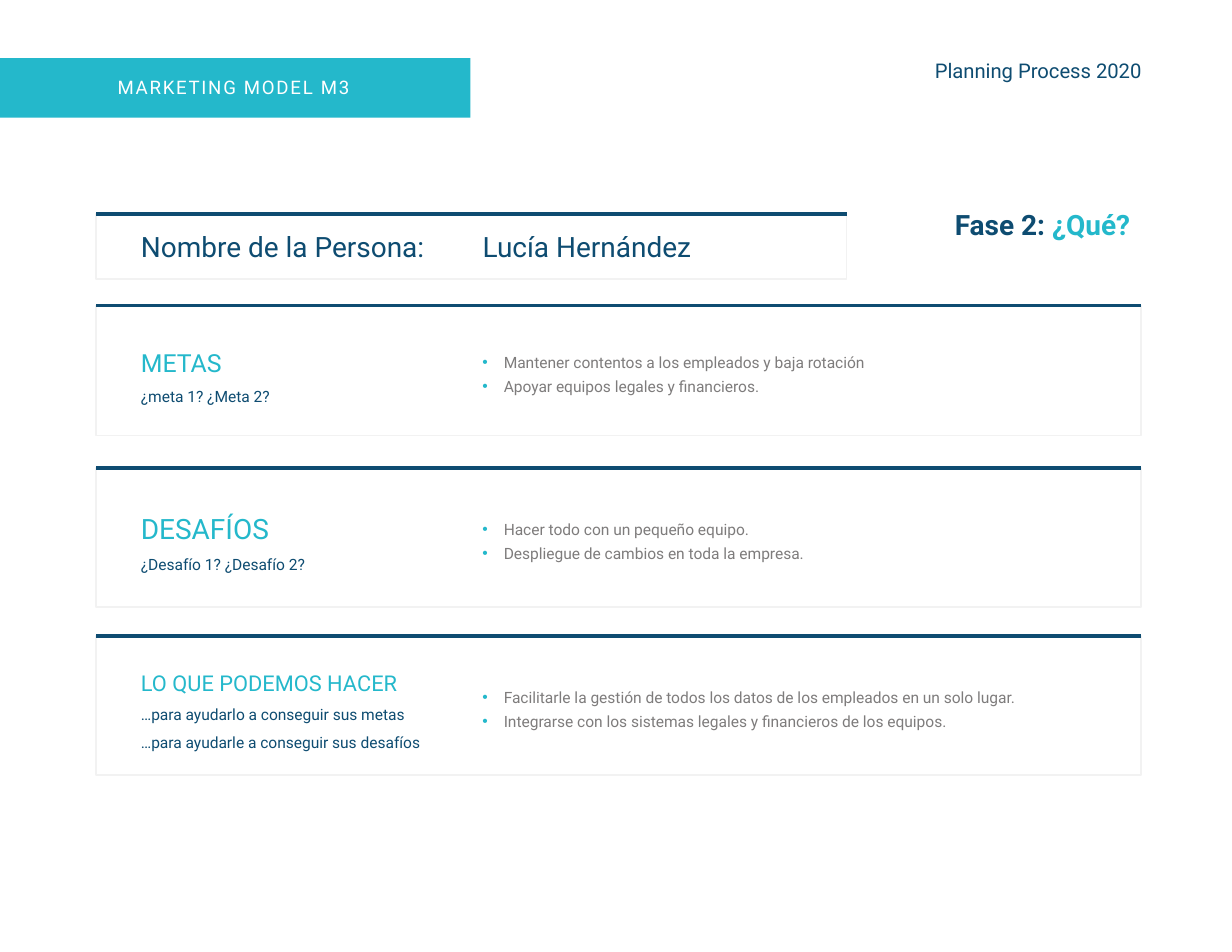
"""Build the persona sheet for phase 2 of the planning process."""
from lxml import etree
from pptx import Presentation
from pptx.dml.color import RGBColor
from pptx.enum.shapes import MSO_CONNECTOR, MSO_SHAPE
from pptx.enum.text import MSO_AUTO_SIZE, PP_ALIGN
from pptx.oxml.ns import qn
from pptx.util import Inches, Pt

RECT, LINE = MSO_SHAPE.RECTANGLE, MSO_CONNECTOR.STRAIGHT
GROW = MSO_AUTO_SIZE.SHAPE_TO_FIT_TEXT
LEFT, RIGHT, JUST = PP_ALIGN.LEFT, PP_ALIGN.RIGHT, PP_ALIGN.JUSTIFY
TEAL = RGBColor(0x24, 0xB8, 0xCB)
NAVY = RGBColor(0x0E, 0x4C, 0x71)
GRAY = RGBColor(0x7E, 0x7C, 0x7C)
PALE = RGBColor(0xF2, 0xF2, 0xF2)
WHITE = RGBColor(0xFF, 0xFF, 0xFF)

deck = Presentation()
deck.slide_width, deck.slide_height = Inches(11), Inches(8.5)
COL, ROW = deck.slide_width / 110, deck.slide_height / 85
slide = deck.slides.add_slide(deck.slide_layouts[6])
shapes = slide.shapes


def place(x, y, w, h):
    return int(x * COL), int(y * ROW), int(w * COL), int(h * ROW)


def write(spot, paras, align=LEFT, gap=None, wrap=True, inset=True, dot=False):
    box = shapes.add_textbox(*place(*spot))
    frame = box.text_frame
    frame.word_wrap, frame.auto_size = wrap, GROW
    if not inset:
        frame.margin_left = frame.margin_right = 0
        frame.margin_top = frame.margin_bottom = 0
    for i, runs in enumerate(paras):
        para = frame.add_paragraph() if i else frame.paragraphs[0]
        para.alignment = align
        if gap:
            para.line_spacing = gap
        if dot:
            props = para._p.get_or_add_pPr()
            props.set("marL", str(int(1.9 * COL)))
            props.set("indent", str(int(-1.9 * COL)))
            tint = etree.SubElement(props, qn("a:buClr"))
            etree.SubElement(tint, qn("a:srgbClr")).set("val", str(TEAL))
            etree.SubElement(props, qn("a:buFont")).set("typeface", "Arial")
            etree.SubElement(props, qn("a:buChar")).set("char", "•")
        for text, size, color, bold in runs:
            run = para.add_run()
            run.text = text
            font = run.font
            font.name, font.size, font.bold = "Roboto", Pt(size), bold
            font.color.rgb = color
    return box


EDGE, WIDE, NAME, TERM, BODY = 8.6, 93.3, 67, 11.6, 42.1
cards = [
    (27.3, 11.6, 29.2, 13.7, 7.3, 30.5, "METAS", 16,
     ["¿meta 1? ¿Meta 2?"],
     ["Mantener contentos a los empleados y baja rotación",
      "Apoyar equipos legales y financieros."]),
    (41.8, 12.4, 43.7, 16.7, 7.8, 45.4, "DESAFÍOS", 18,
     ["¿Desafío 1? ¿Desafío 2?"],
     ["Hacer todo con un pequeño equipo.",
      "Despliegue de cambios en toda la empresa."]),
    (56.8, 12.4, 58.1, 27.5, 9.3, 60.4, "LO QUE PODEMOS HACER", 14,
     ["…para ayudarlo a conseguir sus metas",
      "…para ayudarle a conseguir sus desafíos"],
     ["Facilitarle la gestión de todos los datos de los empleados en un solo lugar.",
      "Integrarse con los sistemas legales y financieros de los equipos."]),
]

frames = [(19.1, NAME, 5.8)] + [(card[0], WIDE, card[1]) for card in cards]
for top, wide, tall in frames:
    panel = shapes.add_shape(RECT, *place(EDGE, top, wide, tall))
    panel.shadow.inherit = False
    panel.fill.background()
    panel.line.color.rgb, panel.line.width = PALE, Pt(1)
    x, y, w, h = place(EDGE, top, wide, tall)
    rule = shapes.add_connector(LINE, x, y, x + w, y)
    rule.line.color.rgb, rule.line.width = NAVY, Pt(2.25)
    etree.SubElement(rule._element.spPr, qn("a:effectLst"))

banner = shapes.add_shape(RECT, *place(0, 5.2, 42, 5.3))
banner.shadow.inherit = False
banner.fill.solid()
banner.fill.fore_color.rgb = TEAL
banner.line.fill.background()
model = write((10.5, 6.8, 23.6, 2), [[("MARKETING MODEL M3", 12, WHITE, False)]],
              inset=False)
model.text_frame.paragraphs[0].runs[0].font._element.set("spc", "110")
write((79.5, 5.2, 22.4, 2.2), [[("Planning Process 2020", 13, NAVY, False)]],
      RIGHT, inset=False)
write((83.6, 18, 18.3, 4),
      [[("Fase 2: ", 18, NAVY, True), ("¿Qué?", 18, TEAL, True)]],
      RIGHT, wrap=False)
write((TERM, 20, 28.5, 4), [[("Nombre de la Persona:", 18, NAVY, False)]])
write((BODY, 20, 27.2, 4), [[("Lucía Hernández", 18, NAVY, False)]])

for top, tall, head, wide, deep, list_top, title, size, asks, facts in cards:
    paras = [[(title, size, TEAL, False)]]
    paras += [[(ask, 10, NAVY, False)] for ask in asks]
    write((TERM, head, wide, deep), paras, gap=1.5, wrap=False)
    write((BODY, list_top, 57.4, 5.2),
          [[(fact, 10, GRAY, False)] for fact in facts], JUST, 1.3, dot=True)

deck.save("out.pptx")
